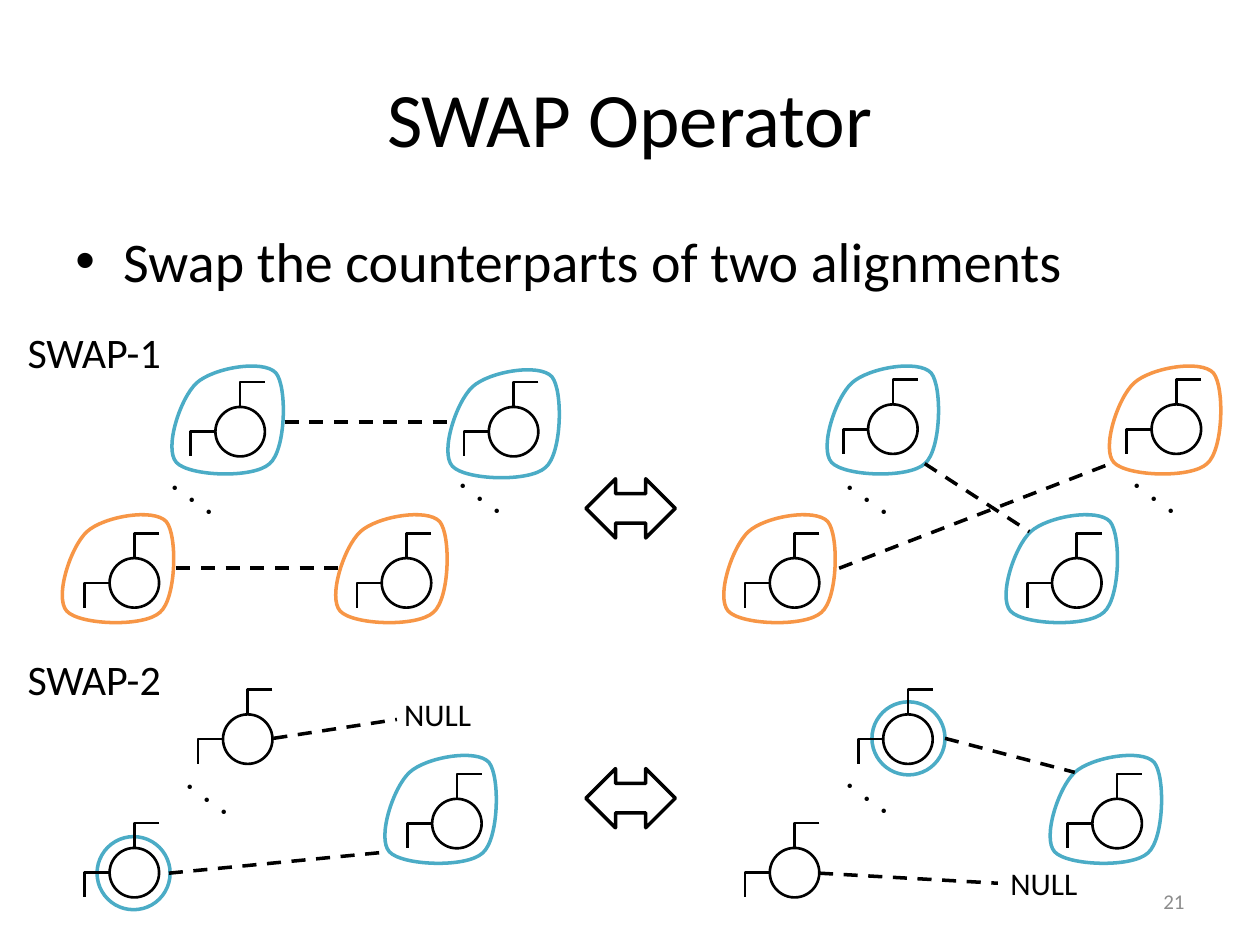
from dataclasses import dataclass

from lxml import etree
from pptx import Presentation
from pptx.dml.color import RGBColor
from pptx.enum.dml import MSO_LINE
from pptx.enum.shapes import MSO_CONNECTOR, MSO_SHAPE
from pptx.enum.text import MSO_ANCHOR, MSO_AUTO_SIZE, PP_ALIGN
from pptx.oxml.ns import qn
from pptx.util import Inches, Pt


@dataclass(frozen=True)
class Theme:
    font: str = "Calibri"
    black: str = "000000"
    grey: str = "8C8C8C"
    blue: str = "4BACC6"
    orange: str = "F79646"
    title: int = 44
    body: int = 32
    heading: int = 24
    label: int = 18
    small: int = 12
    thin: float = 1.5
    thick: float = 2


COLS, ROWS = 100, 75
HUB, ARM, RING = 3.93, 1.97, 5.8
# Start point, then three points for each of four Bezier curves
BUBBLE = [(8.9, 1.1),
          (7.9, 0), (3.9, 0.7), (2.6, 1.9),
          (1.3, 3.1), (0, 7.1), (1, 8.2),
          (2, 9.3), (7.1, 9.5), (8.4, 8.3),
          (9.7, 7.2), (9.8, 2.2), (8.9, 1.1)]


class Canvas:
    """Places elements on a grid of COLS by ROWS cells."""

    def __init__(self, prs, theme):
        self.theme = theme
        self.col, self.row = prs.slide_width / COLS, prs.slide_height / ROWS
        self.shapes = prs.slides.add_slide(prs.slide_layouts[6]).shapes

    def grid(self, *lengths):
        """Turn alternating columns and rows into slide lengths."""
        return [round(n * (self.row if i % 2 else self.col))
                for i, n in enumerate(lengths)]

    def outline(self, shape, color, width):
        shape.shadow.inherit = False
        shape.fill.background()
        shape.line.color.rgb = RGBColor.from_string(color)
        shape.line.width = Pt(width)

    def shape(self, kind, x, y, w, h, color, width):
        sp = self.shapes.add_shape(kind, *self.grid(x, y, w, h))
        self.outline(sp, color, width)

    def connector(self, kind, x1, y1, x2, y2, width):
        c = self.shapes.add_connector(kind, *self.grid(x1, y1, x2, y2))
        c.line.color.rgb = RGBColor.from_string(self.theme.black)
        c.line.width = Pt(width)
        etree.SubElement(c._element.spPr, qn("a:effectLst"))
        return c

    def link(self, x1, y1, x2, y2):
        c = self.connector(MSO_CONNECTOR.STRAIGHT, x1, y1, x2, y2, self.theme.thick)
        c.line.dash_style = MSO_LINE.DASH

    def arm(self, x, y):
        """Draw a right-angled arm whose corner is at x, y."""
        c = self.connector(MSO_CONNECTOR.ELBOW, x + ARM, y, x, y + ARM, self.theme.thin)
        c._element.spPr.find(qn("a:prstGeom")).set("prst", "bentConnector2")

    def node(self, x, y):
        self.shape(MSO_SHAPE.OVAL, x, y, HUB, HUB, self.theme.black, self.theme.thin)
        self.arm(x + HUB / 2, y - ARM)
        self.arm(x - ARM, y + HUB / 2)

    def ring(self, x, y):
        self.shape(MSO_SHAPE.OVAL, x, y, RING, RING, self.theme.blue, self.theme.thick)

    def bubble(self, x, y, color):
        points = [self.grid(x + dx, y + dy) for dx, dy in BUBBLE]
        fb = self.shapes.build_freeform(*points[0])
        fb.add_line_segments(points[1:], close=True)
        sp = fb.convert_to_shape()
        self.outline(sp, color, self.theme.thick)
        # Every three straight segments become one Bezier curve
        lines = list(sp._element.iter(qn("a:lnTo")))[:len(BUBBLE) - 1]
        for i in range(0, len(lines), 3):
            curve = etree.Element(qn("a:cubicBezTo"))
            lines[i].addprevious(curve)
            for line in lines[i:i + 3]:
                curve.append(line[0])
                line.getparent().remove(line)

    def text(self, text, x, y, w, h, size, color=None, align=PP_ALIGN.LEFT,
             anchor=MSO_ANCHOR.TOP, wrap=True):
        sp = self.shapes.add_textbox(*self.grid(x, y, w, h))
        tf = sp.text_frame
        tf.text = text
        tf.word_wrap = wrap
        tf.auto_size = MSO_AUTO_SIZE.NONE if wrap else MSO_AUTO_SIZE.SHAPE_TO_FIT_TEXT
        tf.vertical_anchor = anchor
        p = tf.paragraphs[0]
        p.alignment = align
        font = p.runs[0].font
        font.name, font.size = self.theme.font, Pt(size)
        font.color.rgb = RGBColor.from_string(color or self.theme.black)
        return sp

    def bullet(self, text, x, y, w, h):
        p = self.text(text, x, y, w, h, self.theme.body).text_frame.paragraphs[0]
        p.space_before = Pt(0.2 * self.theme.body)
        pPr = p._p.get_or_add_pPr()
        indent = Inches(0.38)
        pPr.set("marL", str(indent))
        pPr.set("indent", str(-indent))
        etree.SubElement(pPr, qn("a:buFont")).set("typeface", "Arial")
        etree.SubElement(pPr, qn("a:buChar")).set("char", "•")

    def dots(self, x, y):
        """Draw a diagonal ellipsis: vertical text, turned."""
        sp = self.text("・・・", x, y, 4.5, 3, self.theme.small, wrap=False)
        sp.rotation = 306.2
        sp.text_frame._txBody.bodyPr.set("vert", "eaVert")


def main():
    prs = Presentation()
    prs.slide_width, prs.slide_height = Inches(10), Inches(7.5)
    t = Theme()
    s = Canvas(prs, t)

    s.text("SWAP Operator", 5, 3, 90, 12.5, t.title,
           align=PP_ALIGN.CENTER, anchor=MSO_ANCHOR.MIDDLE)
    s.bullet("Swap the counterparts of two alignments", 5, 17.5, 90, 49.5)

    bubbles = {
        t.blue: [(13, 28.5), (34.9, 28.8), (65, 28.5), (79.2, 40.3),
                 (29.9, 59.4), (82.7, 59.4)],
        t.orange: [(4.3, 40.3), (26, 40.3), (56.8, 40.3), (87.4, 28.5)],
    }
    for color, places in bubbles.items():
        for x, y in places:
            s.bubble(x, y, color)
    for x, y in [(7.7, 66.4), (69.2, 55.7)]:
        s.ring(x, y)

    swap1_nodes = [(17.1, 32.3), (38.8, 32.3), (68.9, 32.1), (91.4, 32.1),
                   (8.7, 44.3), (30.3, 44.3), (61.1, 44.3), (83.5, 44.3)]
    swap2_nodes = [(17.7, 56.7), (34.3, 63.4), (70.1, 56.7), (86.7, 63.4),
                   (8.7, 67.3), (61.1, 67.3)]
    for x, y in swap1_nodes + swap2_nodes:
        s.node(x, y)

    swap1_links = [(22.6, 33.5, 35.8, 33.5), (14, 45.1, 27.2, 45.1),
                   (73.4, 36.8, 81.7, 42.2), (66.6, 45.1, 88.4, 36.7)]
    swap2_links = [(21.7, 58.6, 31.5, 57.1), (13.4, 69.3, 30.9, 67.6),
                   (75, 58.6, 85.3, 61.3), (65, 69.3, 79.2, 70.1)]
    for ends in swap1_links + swap2_links:
        s.link(*ends)

    for x, y in [(10.9, 37.7), (33.8, 37.6), (64.5, 37.7), (87.3, 37.6),
                 (12.1, 61.5), (64.5, 61.4)]:
        s.dots(x, y)
    for x, y in [(31.1, 54.7), (79.2, 68.1)]:
        s.text("NULL", x, y, 7.4, 4, t.label, wrap=False)
    for heading, y, arrow_y in [("SWAP-1", 25.4, 38), ("SWAP-2", 51.4, 61)]:
        s.text(heading, 1.2, y, 12.8, 5, t.heading, wrap=False)
        s.shape(MSO_SHAPE.LEFT_RIGHT_ARROW, 46.5, arrow_y, 7.1, 4.7, t.black, t.thick)
    s.text("21", 71.7, 69.5, 23.3, 4, t.small, t.grey,
           PP_ALIGN.RIGHT, MSO_ANCHOR.MIDDLE)

    prs.save("out.pptx")


if __name__ == "__main__":
    main()
